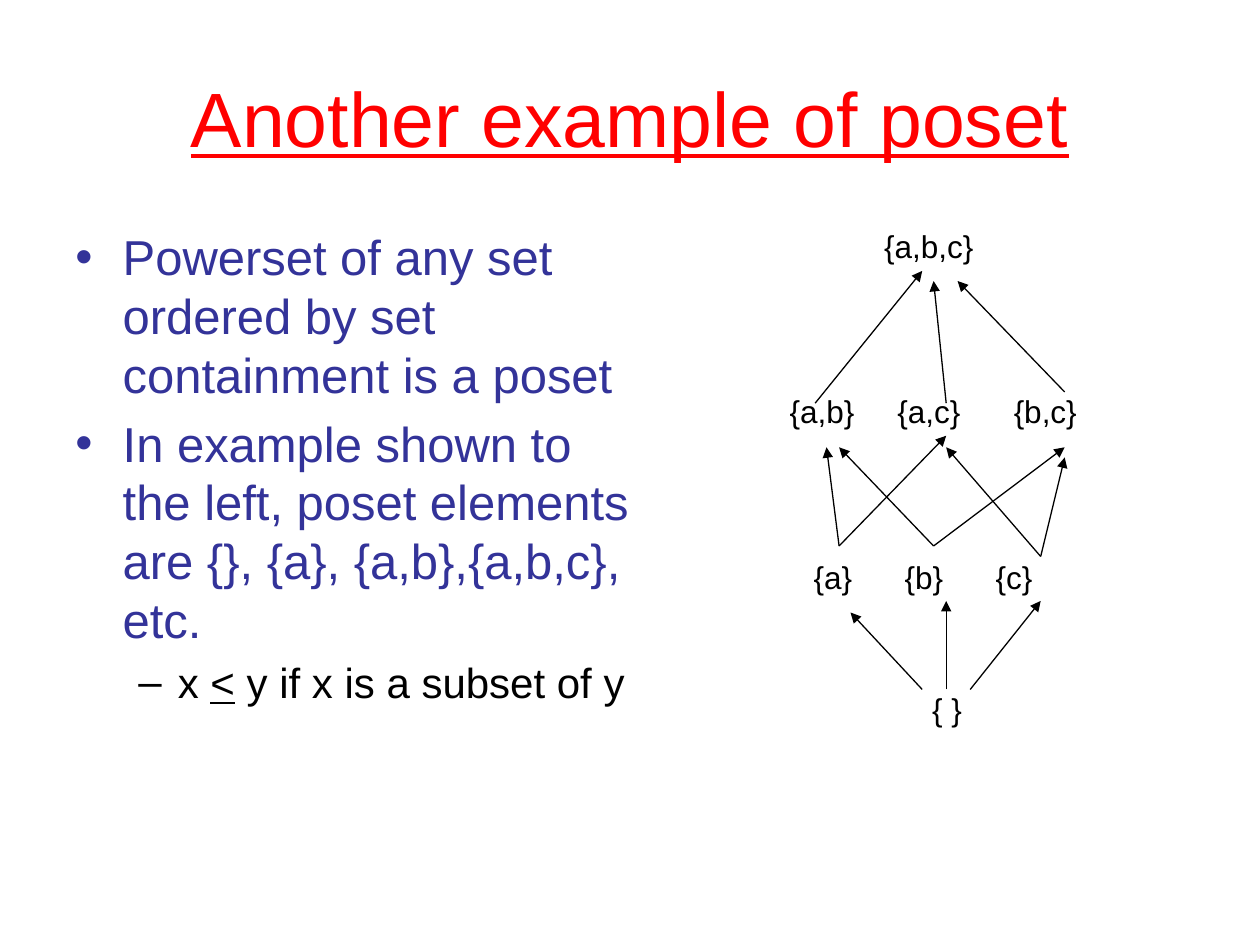
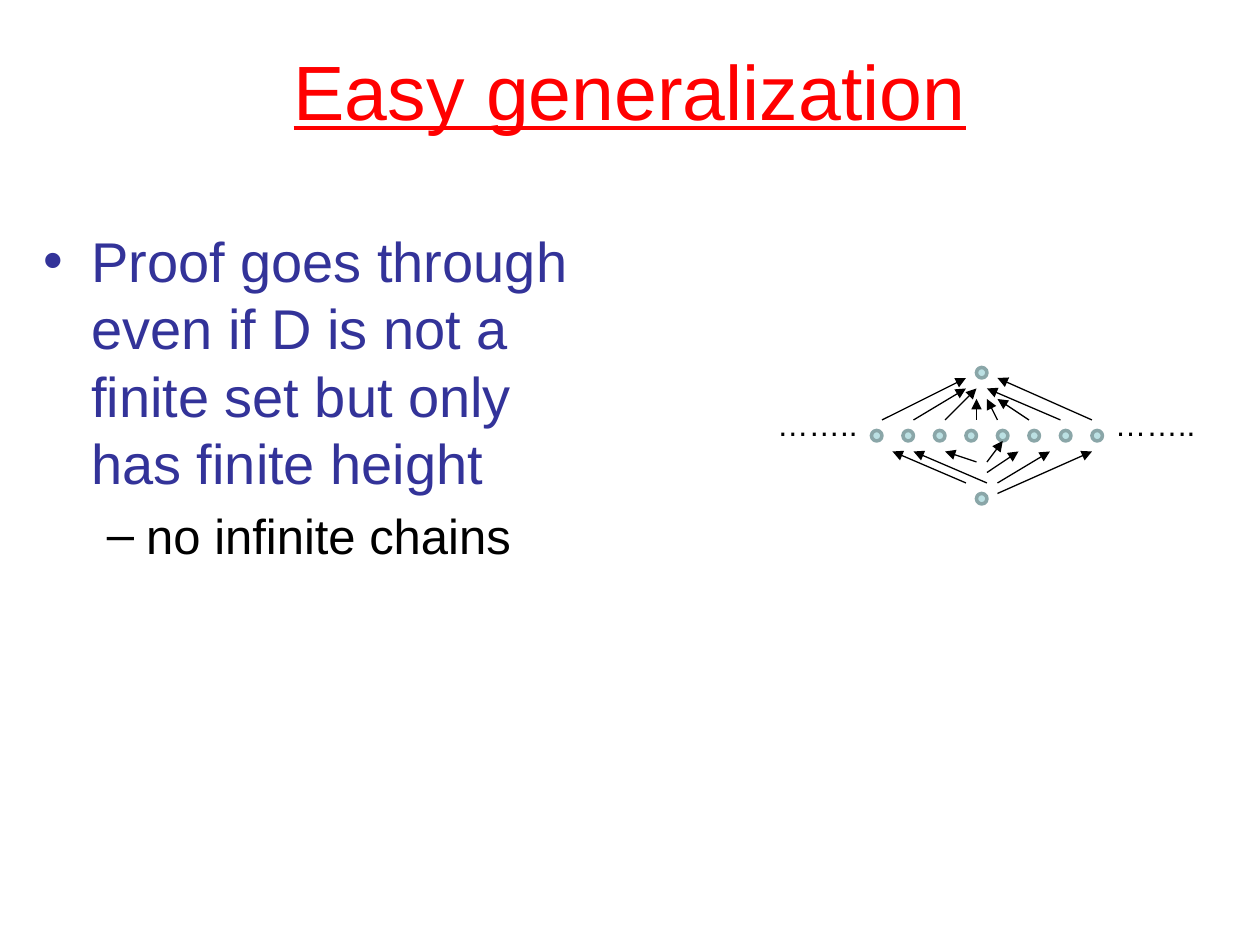
from lxml.etree import SubElement
from pptx import Presentation
from pptx.dml.color import RGBColor
from pptx.enum.shapes import MSO_CONNECTOR, MSO_SHAPE
from pptx.enum.text import MSO_ANCHOR, PP_ALIGN
from pptx.oxml.ns import qn
from pptx.util import Pt

RED = RGBColor(0xFF, 0x00, 0x00)
INDIGO = RGBColor(0x33, 0x33, 0x99)
BLACK = RGBColor(0x00, 0x00, 0x00)
DOT_FILL = RGBColor(0xBB, 0xE0, 0xE3)
DOT_LINE = RGBColor(0x8A, 0xA6, 0xA8)
FONT = "Arial"

LEVELS = [("•", 27, -27, INDIGO), ("–", 58.5, -22.5, BLACK)]

POSET = {
    "title": ("Another example of poset", 21.6),
    "body": (36, 336, 28, 24, [
        (0, [("Powerset of any set ordered by set containment is a poset", False)]),
        (0, [("In example shown to the left, poset elements are "
              "{}, {a}, {a,b},{a,b,c}, etc.", False)]),
        (1, [("x ", False), ("<", True), (" y if x is a subset of y", False)]),
    ]),
    "labels": [
        ("{ }", 525.6, 391, 31.7, []),
        ("{a}\t{b}\t{c}", 457.9, 315.4, 139.7, [52, 104]),
        ("{a,b}\t{a,c}\t{b,c}", 444.2, 220.3, 178.6, [61.5, 128]),
        ("{a,b,c}", 498.2, 126, 65.5, []),
    ],
    "arrows": [
        (527, 394, 486, 350), (540.7, 394, 540.7, 343.4), (554.4, 394, 594.7, 343.4),
        (479.5, 312, 472.3, 255.6), (533.5, 312, 479.5, 255.6),
        (479.5, 312, 540.7, 249), (594.7, 318, 540.7, 255.6),
        (533.5, 312, 608.4, 255.6), (594.7, 318, 608.4, 261.4),
        (465.8, 230.4, 527, 154.8), (540.7, 230.4, 533.5, 160.6),
        (608.4, 224, 547.2, 160.6),
    ],
    "dots": [],
}

GENERALIZATION = {
    "title": ("Easy generalization", 6),
    "body": (18, 318, 32, 28, [
        (0, [("Proof goes through even if D is not a finite set "
              "but only has finite height", False)]),
        (1, [("no infinite chains", False)]),
    ]),
    "labels": [("……..", 630, 228, 61.2, []), ("……..", 437, 228, 61.2, [])],
    "arrows": [
        (504, 240, 552, 216), (522, 240, 552, 222), (624, 240, 570, 216),
        (606, 240, 564, 222), (540, 240, 558, 222), (558, 240, 558, 228),
        (570, 240, 564, 228), (588, 240, 570, 228),
        (552, 276, 510, 258), (564, 276, 522, 258), (570, 282, 624, 258),
        (570, 276, 600, 258), (564, 270, 582, 258), (558, 264, 540, 258),
        (564, 264, 573, 252),
    ],
    "dots": [(498 + 18 * i, 246) for i in range(8)] + [(558, 282), (558, 210)],
}


def add_text_box(slide, x, y, w, h, wrap=True):
    tf = slide.shapes.add_textbox(Pt(x), Pt(y), Pt(w), Pt(h)).text_frame
    tf.word_wrap = wrap
    return tf


def format_run(r, size, color, underline=False):
    r.font.name = FONT
    r.font.size = Pt(size)
    r.font.color.rgb = color
    r.font.underline = underline


def add_title(slide, text, top):
    tf = add_text_box(slide, 36, top, 648, 90)
    tf.vertical_anchor = MSO_ANCHOR.MIDDLE
    tf.text = text
    p = tf.paragraphs[0]
    p.alignment = PP_ALIGN.CENTER
    format_run(p.runs[0], 44, RED, True)


def add_body(slide, left, width, main_size, sub_size, items):
    tf = add_text_box(slide, left, 126, width, 356.4)
    for i, (level, runs) in enumerate(items):
        p = tf.add_paragraph() if i else tf.paragraphs[0]
        bullet, margin, indent, color = LEVELS[level]
        size = (main_size, sub_size)[level]
        p.level = level
        p.space_before = Pt(0.2 * size)
        pPr = p._p.get_or_add_pPr()
        pPr.set("marL", str(Pt(margin)))
        pPr.set("indent", str(Pt(indent)))
        SubElement(pPr, qn("a:buFont"), typeface=FONT)
        SubElement(pPr, qn("a:buChar"), char=bullet)
        for text, underline in runs:
            r = p.add_run()
            r.text = text
            format_run(r, size, color, underline)


def add_label(slide, text, x, y, w, stops):
    tf = add_text_box(slide, x, y, w, 28.8, wrap=False)
    tf.text = text
    p = tf.paragraphs[0]
    if stops:
        tabs = SubElement(p._p.get_or_add_pPr(), qn("a:tabLst"))
        for stop in stops:
            SubElement(tabs, qn("a:tab"), pos=str(Pt(stop)), algn="l")
    for r in p.runs:
        format_run(r, 18, BLACK)


def add_arrow(slide, x1, y1, x2, y2):
    sp = slide.shapes.add_connector(
        MSO_CONNECTOR.STRAIGHT, Pt(x1), Pt(y1), Pt(x2), Pt(y2))
    sp.line.color.rgb = BLACK
    sp.line.width = Pt(0.75)
    SubElement(sp.line._get_or_add_ln(), qn("a:tailEnd"), type="triangle")
    SubElement(sp._element.spPr, qn("a:effectLst"))


def add_dot(slide, x, y):
    sp = slide.shapes.add_shape(MSO_SHAPE.OVAL, Pt(x), Pt(y), Pt(6), Pt(6))
    sp.shadow.inherit = False
    sp.fill.solid()
    sp.fill.fore_color.rgb = DOT_FILL
    sp.line.color.rgb = DOT_LINE
    sp.line.width = Pt(2)


def main():
    prs = Presentation()
    prs.slide_width, prs.slide_height = Pt(720), Pt(540)
    for content in (POSET, GENERALIZATION):
        slide = prs.slides.add_slide(prs.slide_layouts[6])
        add_title(slide, *content["title"])
        add_body(slide, *content["body"])
        for key, add in (("labels", add_label), ("dots", add_dot), ("arrows", add_arrow)):
            for part in content[key]:
                add(slide, *part)
    prs.save("out.pptx")


if __name__ == "__main__":
    main()
